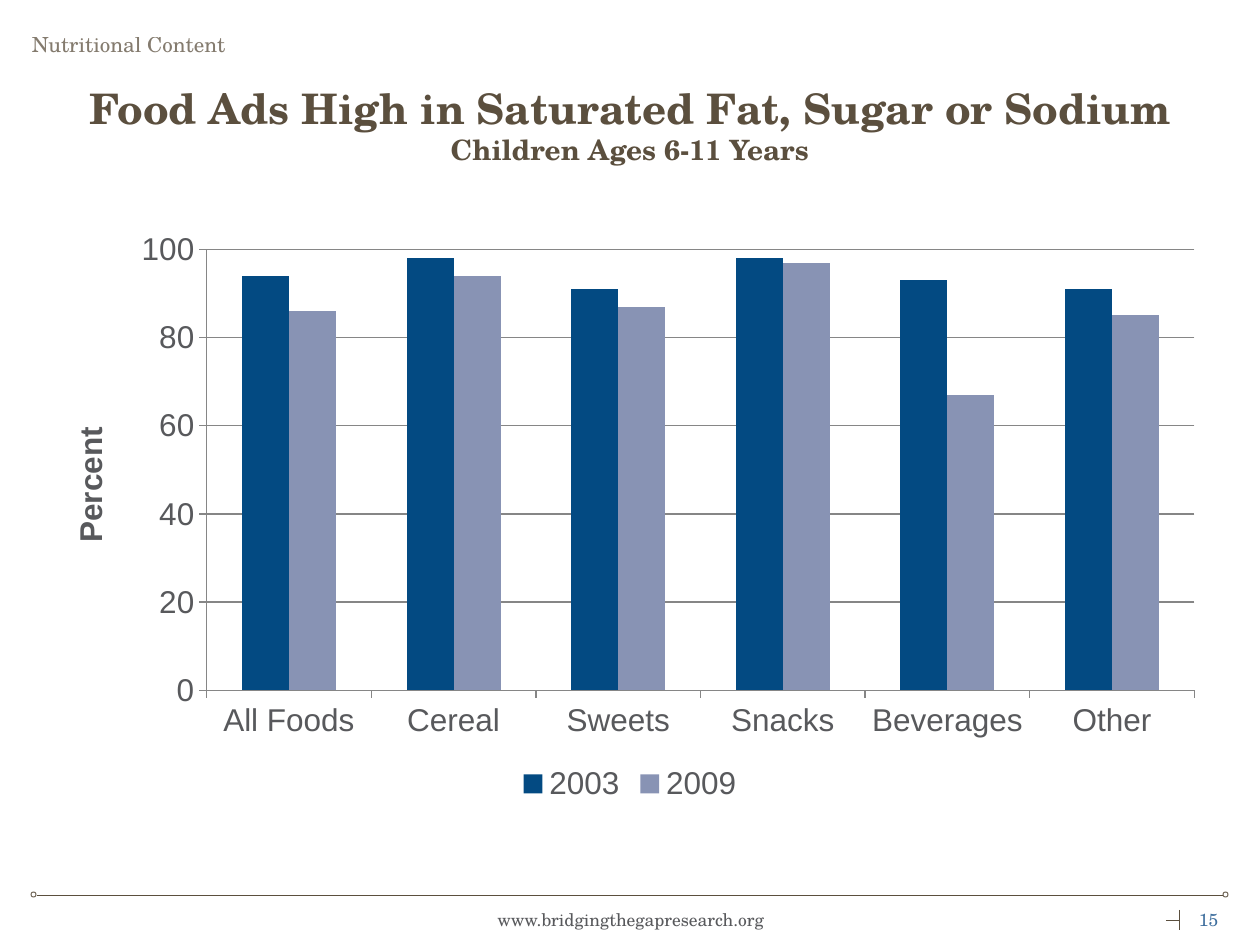
"""Build the slide on food ads high in saturated fat, sugar or sodium."""
from dataclasses import dataclass

import lxml.etree
import pptx
import pptx.chart.data
import pptx.dml.color
import pptx.enum.chart
import pptx.enum.shapes
import pptx.enum.text
import pptx.oxml
import pptx.oxml.ns
import pptx.util

EMU_PER_PX = 914400 / 126
SERIF = "TeX Gyre Schola"
COLORS = {
    "brown": "5B4F3E",
    "gray": "58595C",
    "page": "3F6F9E",
    "grid": "868686",
    "2003": "034A82",
    "2009": "8893B4",
}
CATEGORIES = ["All Foods", "Cereal", "Sweets", "Snacks", "Beverages", "Other"]
PERCENTS = {
    "2003": [94, 98, 91, 98, 93, 91],
    "2009": [86, 94, 87, 97, 67, 85],
}
ALIGN = pptx.enum.text.PP_ALIGN
ANCHOR = pptx.enum.text.MSO_ANCHOR


@dataclass
class Box:
    left: int
    top: int
    width: int
    height: int

    def emu(self) -> list[int]:
        return [px(n) for n in (self.left, self.top, self.width, self.height)]


@dataclass
class Label:
    text: str
    box: Box
    size: int
    color: str
    align: ALIGN = ALIGN.LEFT
    anchor: ANCHOR = ANCHOR.MIDDLE
    inset: int = 12
    opacity: int = 100


@dataclass
class Rule:
    x1: int
    y1: int
    x2: int
    y2: int


LABELS = [
    Label("15", Box(1187, 895, 63, 50), 10, "page"),
    Label("www.bridgingthegapresearch.org", Box(431, 895, 399, 50), 10, "gray", ALIGN.CENTER),
    Label("Nutritional Content", Box(32, 32, 1029, 25), 12, "brown",
          anchor=ANCHOR.TOP, inset=0, opacity=75),
]
RULES = [Rule(37, 895, 1223, 895), Rule(1179, 910, 1179, 930), Rule(1166, 920, 1179, 920)]
END_DOTS = [Box(31, 892, 5, 5), Box(1223, 892, 5, 5)]


def px(length: int) -> int:
    return round(length * EMU_PER_PX)


def rgb(name: str) -> pptx.dml.color.RGBColor:
    return pptx.dml.color.RGBColor.from_string(COLORS[name])


def add_run(paragraph, text: str, size: int, color: str, bold: bool = False):
    run = paragraph.add_run()
    run.text = text
    run.font.name = SERIF
    run.font.size = pptx.util.Pt(size)
    run.font.bold = bold
    run.font.color.rgb = rgb(color)
    return run


def set_frame(frame, anchor: ANCHOR, inset: int) -> None:
    frame.word_wrap = True
    frame.auto_size = pptx.enum.text.MSO_AUTO_SIZE.NONE
    frame.vertical_anchor = anchor
    frame.margin_left = frame.margin_right = px(inset)
    frame.margin_top = frame.margin_bottom = px(inset // 2)


def draw_label(slide, label: Label) -> None:
    frame = slide.shapes.add_textbox(*label.box.emu()).text_frame
    set_frame(frame, label.anchor, label.inset)
    paragraph = frame.paragraphs[0]
    paragraph.alignment = label.align
    run = add_run(paragraph, label.text, label.size, label.color)
    if label.opacity < 100:
        tint = run._r.xpath(".//a:srgbClr")[0]
        alpha = lxml.etree.SubElement(tint, pptx.oxml.ns.qn("a:alpha"))
        alpha.set("val", str(label.opacity * 1000))


def set_line(line, color: str, width: float) -> None:
    line.color.rgb = rgb(color)
    line.width = pptx.util.Pt(width)


def draw_rule(slide, rule: Rule) -> None:
    connector = slide.shapes.add_connector(
        pptx.enum.shapes.MSO_CONNECTOR.STRAIGHT,
        px(rule.x1), px(rule.y1), px(rule.x2), px(rule.y2))
    set_line(connector.line, "brown", 0.5)
    lxml.etree.SubElement(connector._element.spPr, pptx.oxml.ns.qn("a:effectLst"))


def draw_end_dot(slide, box: Box) -> None:
    dot = slide.shapes.add_shape(pptx.enum.shapes.MSO_SHAPE.OVAL, *box.emu())
    dot.shadow.inherit = False
    dot.fill.background()
    set_line(dot.line, "brown", 0.5)


def write_title(slide) -> None:
    title = slide.shapes.title
    title.left, title.top, title.width, title.height = Box(0, 73, 1260, 93).emu()
    set_frame(title.text_frame, ANCHOR.BOTTOM, 0)
    paragraph = title.text_frame.paragraphs[0]
    paragraph.alignment = ALIGN.CENTER
    add_run(paragraph, "Food Ads High in Saturated Fat, Sugar or Sodium", 24, "brown", True)
    paragraph.add_line_break()
    add_run(paragraph, "Children Ages 6-11 Years", 16, "brown", True)


def set_font(font, bold: bool = False) -> None:
    font.name = "Arial"
    font.size = pptx.util.Pt(18)
    font.bold = bold
    font.color.rgb = rgb("gray")


def set_plot_layout(chart, **fractions: float) -> None:
    plot_area = chart._chartSpace.chart.plotArea
    for old in plot_area.xpath("c:layout"):
        plot_area.remove(old)
    settings = {"layoutTarget": "inner", "xMode": "edge", "yMode": "edge", **fractions}
    parts = "".join(f'<c:{tag} val="{value}"/>' for tag, value in settings.items())
    plot_area.insert(0, pptx.oxml.parse_xml(
        f'<c:layout {pptx.oxml.ns.nsdecls("c")}><c:manualLayout>{parts}'
        "</c:manualLayout></c:layout>"))


def draw_chart(slide) -> None:
    ads = pptx.chart.data.CategoryChartData()
    ads.categories = CATEGORIES
    for year, values in PERCENTS.items():
        ads.add_series(year, values)
    chart = slide.shapes.add_chart(
        pptx.enum.chart.XL_CHART_TYPE.COLUMN_CLUSTERED, *Box(42, 220, 1176, 588).emu(), ads).chart
    set_font(chart.font)
    chart.has_title = False
    chart.has_legend = True
    chart.legend.position = pptx.enum.chart.XL_LEGEND_POSITION.BOTTOM
    chart.legend.include_in_layout = False
    set_plot_layout(chart, x=0.14, y=0.05, w=0.84, h=0.75)

    columns = chart.plots[0]
    columns.vary_by_categories = False
    columns.gap_width = 150
    columns.overlap = 0
    for series in columns.series:
        series.format.fill.solid()
        series.format.fill.fore_color.rgb = rgb(series.name)

    percent = chart.value_axis
    percent.minimum_scale, percent.maximum_scale, percent.major_unit = 0, 100, 20
    percent.has_major_gridlines = True
    set_line(percent.major_gridlines.format.line, "grid", 0.75)
    percent_run = percent.axis_title.text_frame.paragraphs[0].add_run()
    percent_run.text = "Percent"
    set_font(percent_run.font, bold=True)
    for axis in (percent, chart.category_axis):
        axis.major_tick_mark = pptx.enum.chart.XL_TICK_MARK.OUTSIDE
        set_line(axis.format.line, "grid", 0.75)


def main() -> None:
    deck = pptx.Presentation()
    deck.slide_width, deck.slide_height = px(1260), px(945)
    slide = deck.slides.add_slide(deck.slide_layouts.get_by_name("Title Only"))
    for dot in END_DOTS:
        draw_end_dot(slide, dot)
    for rule in RULES:
        draw_rule(slide, rule)
    write_title(slide)
    draw_chart(slide)
    for label in LABELS:
        draw_label(slide, label)
    deck.save("out.pptx")


if __name__ == "__main__":
    main()
